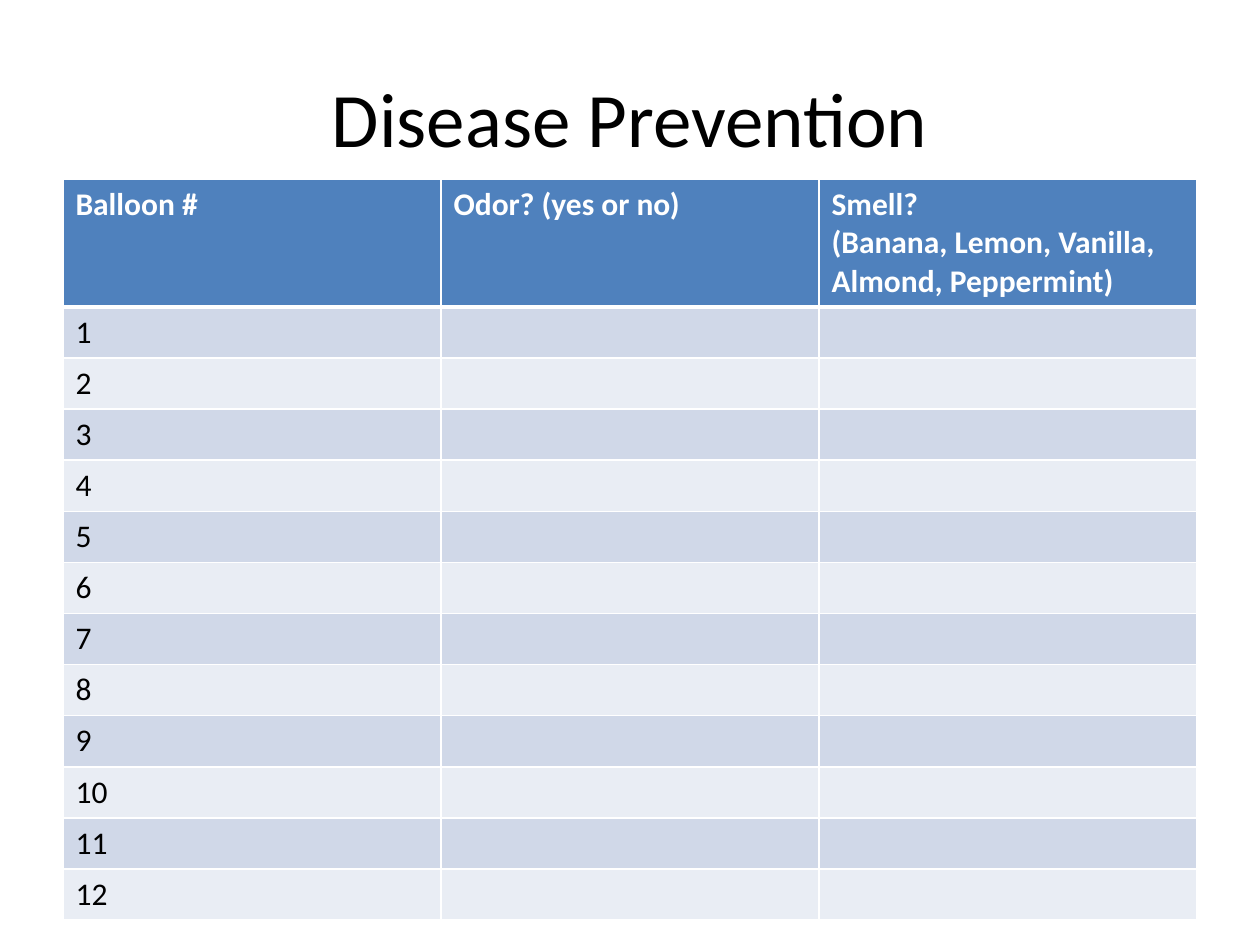
import pptx
import pptx.dml.color
import pptx.enum.text
import pptx.oxml
import pptx.oxml.ns
import pptx.util

Pt = pptx.util.Pt

HEADERS = ["Balloon #", "Odor? (yes or no)",
           "Smell?\n(Banana, Lemon, Vanilla, Almond, Peppermint)"]
BALLOONS = 12
HEADER_FILL = "4F81BD"
BAND_FILLS = ["D0D8E8", "E9EDF4"]
WHITE = "FFFFFF"
BLACK = "000000"


def rgb(color):
    return pptx.dml.color.RGBColor.from_string(color)


def write(tf, text, size=18, color=BLACK, bold=False, align=None):
    """Write text in one paragraph, with a line break at each newline."""
    p = tf.paragraphs[0]
    p.alignment = align
    for i, line in enumerate(text.split("\n")):
        if i:
            p.add_line_break()
        r = p.add_run()
        r.text = line
        r.font.name = "Calibri"
        r.font.size = Pt(size)
        r.font.bold = bold
        r.font.color.rgb = rgb(color)


def set_borders(cell, top=1, bottom=1):
    """Give a cell white borders; widths are in points."""
    tc_pr = cell._tc.get_or_add_tcPr()
    for side, width in (("L", 1), ("R", 1), ("T", top), ("B", bottom)):
        tc_pr.append(pptx.oxml.parse_xml(
            f'<a:ln{side} {pptx.oxml.ns.nsdecls("a")} w="{Pt(width)}">'
            f'<a:solidFill><a:srgbClr val="{WHITE}"/></a:solidFill>'
            f'</a:ln{side}>'))


def style_cell(cell, fill, top=1, bottom=1):
    set_borders(cell, top, bottom)
    cell.fill.solid()
    cell.fill.fore_color.rgb = rgb(fill)


def add_title(s, text):
    sp = s.shapes.title
    sp.left, sp.top, sp.width, sp.height = Pt(36), Pt(21.6), Pt(648), Pt(90)
    tf = sp.text_frame
    tf.word_wrap = True
    tf.vertical_anchor = pptx.enum.text.MSO_ANCHOR.MIDDLE
    write(tf, text, size=44, align=pptx.enum.text.PP_ALIGN.CENTER)


def add_balloon_table(s):
    header_height, row_height = 70.6, 28.8
    table = s.shapes.add_table(
        BALLOONS + 1, len(HEADERS), Pt(36), Pt(102.24), Pt(648),
        Pt(header_height + BALLOONS * row_height)).table
    table.rows[0].height = Pt(header_height)
    for cell, text in zip(table.rows[0].cells, HEADERS):
        style_cell(cell, HEADER_FILL, bottom=3)
        write(cell.text_frame, text, color=WHITE, bold=True)
    for number in range(1, BALLOONS + 1):
        row = table.rows[number]
        row.height = Pt(row_height)
        for cell in row.cells:
            style_cell(cell, BAND_FILLS[(number - 1) % 2],
                       top=3 if number == 1 else 1)
        write(row.cells[0].text_frame, str(number))


def main():
    prs = pptx.Presentation()
    prs.slide_width, prs.slide_height = Pt(720), Pt(540)
    s = prs.slides.add_slide(prs.slide_layouts[5])
    add_title(s, "Disease Prevention")
    add_balloon_table(s)
    prs.save("out.pptx")


if __name__ == "__main__":
    main()
